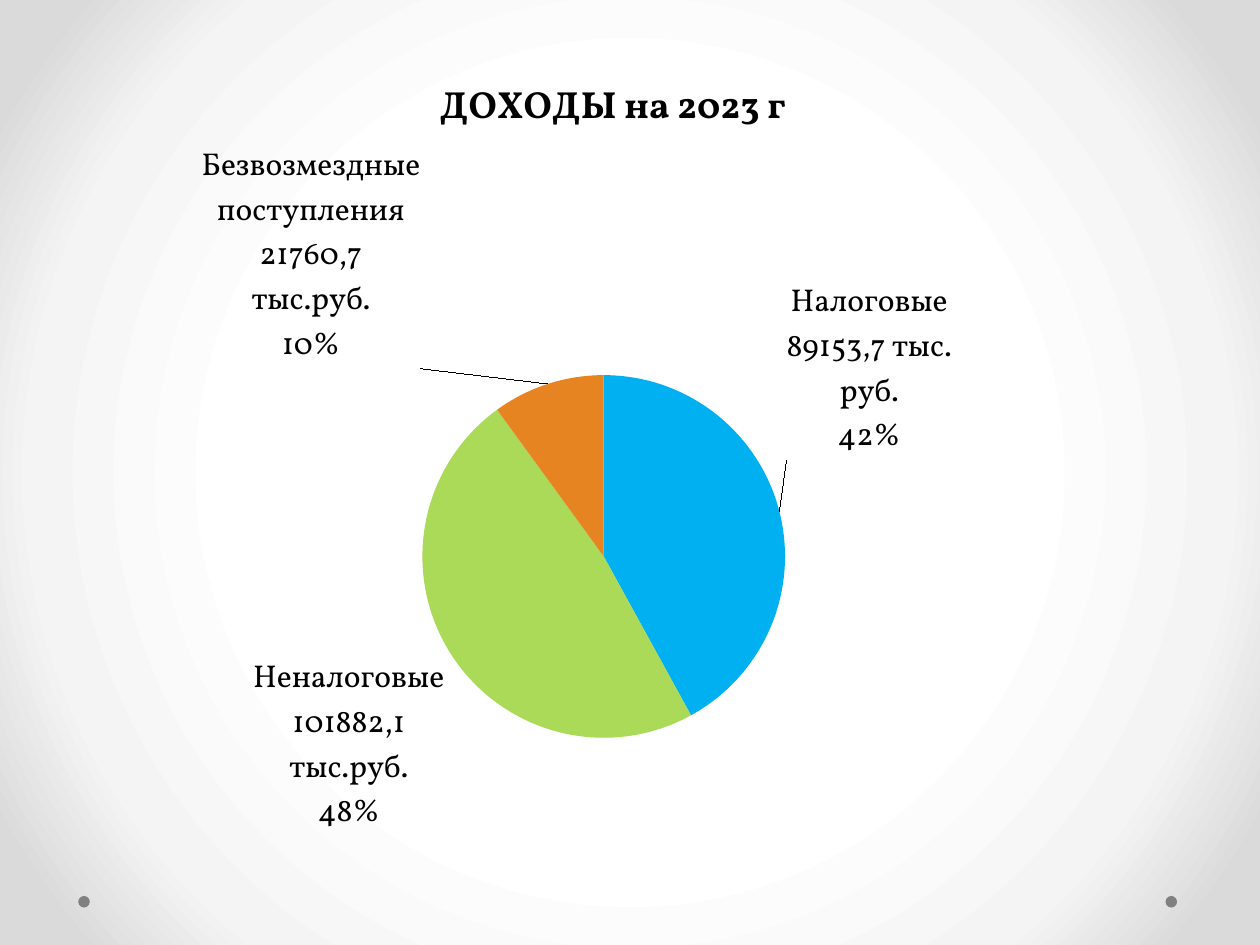
from lxml.etree import SubElement
from pptx import Presentation
from pptx.chart.data import CategoryChartData
from pptx.dml.color import RGBColor
from pptx.enum.chart import XL_CHART_TYPE, XL_LABEL_POSITION
from pptx.enum.shapes import MSO_SHAPE
from pptx.oxml import parse_xml
from pptx.oxml.ns import nsdecls, qn
from pptx.util import Pt

TITLE = "ДОХОДЫ на 2023 г"
INCOME = [
    {"name": "Налоговые\n89153,7 тыс. руб.", "share": 42, "color": "00B0F0", "shift": (0, -0.06)},
    {"name": "Неналоговые\n101882,1 тыс.руб.", "share": 48, "color": "ABD958", "shift": None},
    {"name": "Безвозмездные поступления\n21760,7 тыс.руб.", "share": 10, "color": "E68422", "shift": (-0.11, -0.01)},
]
THEME = {
    "font": "Vollkorn",
    "text": "000000",
    "dot": "808080",
    "label_size": 18,
    "title_size": 21.6,
    "background": [(50, "FFFFFF"), (76, "F4F4F4"), (92, "DADADA")],
}
SLIDE_SIZE = (720, 540)
CHART_BOX = (20, 26, 650, 471)
DOT_LEFTS = (44.7, 666)
DOT_TOP = 512
DOT_SIZE = 6.6
TITLE_PLACE = {"xMode": "edge", "yMode": "edge", "x": 0.35, "y": 0.03}
PIE_PLACE = {"layoutTarget": "inner", "xMode": "edge", "yMode": "edge",
             "x": 0.34, "y": 0.4, "w": 0.32, "h": 0.44}


def make_layout(values):
    layout = parse_xml(f"<c:layout {nsdecls('c')}><c:manualLayout/></c:layout>")
    for name, value in values.items():
        SubElement(layout[0], qn(f"c:{name}")).set("val", str(value))
    return layout


def set_layout(element, values, after=None):
    for layout in element.findall(qn("c:layout")):
        element.remove(layout)
    position = 0 if after is None else element.index(element.find(qn(after))) + 1
    element.insert(position, make_layout(values))


def style_font(font, size, bold):
    font.name = THEME["font"]
    font.size = Pt(size)
    font.bold = bold
    font.color.rgb = RGBColor.from_string(THEME["text"])


def paint_background(slide):
    stops = "".join(
        f'<a:gs pos="{position * 1000}"><a:srgbClr val="{color}"/></a:gs>'
        for position, color in THEME["background"]
    )
    background = parse_xml(
        f"<p:bg {nsdecls('p', 'a')}><p:bgPr><a:gradFill rotWithShape=\"1\"><a:gsLst>{stops}</a:gsLst>"
        '<a:path path="circle"><a:fillToRect l="50000" t="50000" r="50000" b="50000"/></a:path>'
        "</a:gradFill><a:effectLst/></p:bgPr></p:bg>"
    )
    slide.element.cSld.insert(0, background)


def add_dots(slide):
    for left in DOT_LEFTS:
        dot = slide.shapes.add_shape(MSO_SHAPE.OVAL, Pt(left), Pt(DOT_TOP), Pt(DOT_SIZE), Pt(DOT_SIZE))
        dot.shadow.inherit = False
        dot.fill.solid()
        dot.fill.fore_color.rgb = RGBColor.from_string(THEME["dot"])
        dot.line.fill.background()


def place_labels(labels_element):
    separator = parse_xml(f"<c:separator {nsdecls('c')}>\n</c:separator>")
    labels_element.find(qn("c:showBubbleSize")).addnext(separator)
    leader = labels_element.find(qn("c:showLeaderLines"))
    if leader is None:
        leader = parse_xml(f"<c:showLeaderLines {nsdecls('c')}/>")
        separator.addnext(leader)
    leader.set("val", "1")
    moved = [(index, part["shift"]) for index, part in enumerate(INCOME) if part["shift"]]
    for order, (index, (x, y)) in enumerate(moved):
        label = parse_xml(
            f'<c:dLbl {nsdecls("c")}><c:idx val="{index}"/><c:dLblPos val="outEnd"/>'
            '<c:showLegendKey val="0"/><c:showVal val="0"/><c:showCatName val="1"/>'
            '<c:showSerName val="0"/><c:showPercent val="1"/><c:showBubbleSize val="0"/>'
            "<c:separator>\n</c:separator></c:dLbl>"
        )
        set_layout(label, {"x": x, "y": y}, after="c:idx")
        labels_element.insert(order, label)


def add_income_chart(slide):
    data = CategoryChartData()
    data.categories = [part["name"] for part in INCOME]
    data.add_series(TITLE, [part["share"] for part in INCOME])
    chart = slide.shapes.add_chart(XL_CHART_TYPE.PIE, *map(Pt, CHART_BOX), data).chart
    style_font(chart.font, THEME["label_size"], False)
    chart.has_legend = False
    chart.has_title = True
    title_frame = chart.chart_title.text_frame
    title_frame.text = TITLE
    style_font(title_frame.paragraphs[0].runs[0].font, THEME["title_size"], True)
    chart_element = chart.element.find(qn("c:chart"))
    set_layout(chart_element.find(qn("c:title")), TITLE_PLACE, after="c:tx")
    set_layout(chart_element.find(qn("c:plotArea")), PIE_PLACE)

    plot = chart.plots[0]
    plot.vary_by_categories = True
    series = plot.series[0]
    for index, part in enumerate(INCOME):
        fill = series.points[index].format.fill
        fill.solid()
        fill.fore_color.rgb = RGBColor.from_string(part["color"])
    labels = series.data_labels
    labels.show_value = False
    labels.show_category_name = True
    labels.show_percentage = True
    labels.number_format = "0%"
    labels.number_format_is_linked = False
    labels.position = XL_LABEL_POSITION.OUTSIDE_END
    style_font(labels.font, THEME["label_size"], False)
    place_labels(series.format and plot.series[0].data_labels._element)


def main():
    presentation = Presentation()
    presentation.slide_width, presentation.slide_height = map(Pt, SLIDE_SIZE)
    slide = presentation.slides.add_slide(presentation.slide_layouts[6])
    paint_background(slide)
    add_dots(slide)
    add_income_chart(slide)
    presentation.save("out.pptx")


if __name__ == "__main__":
    main()
